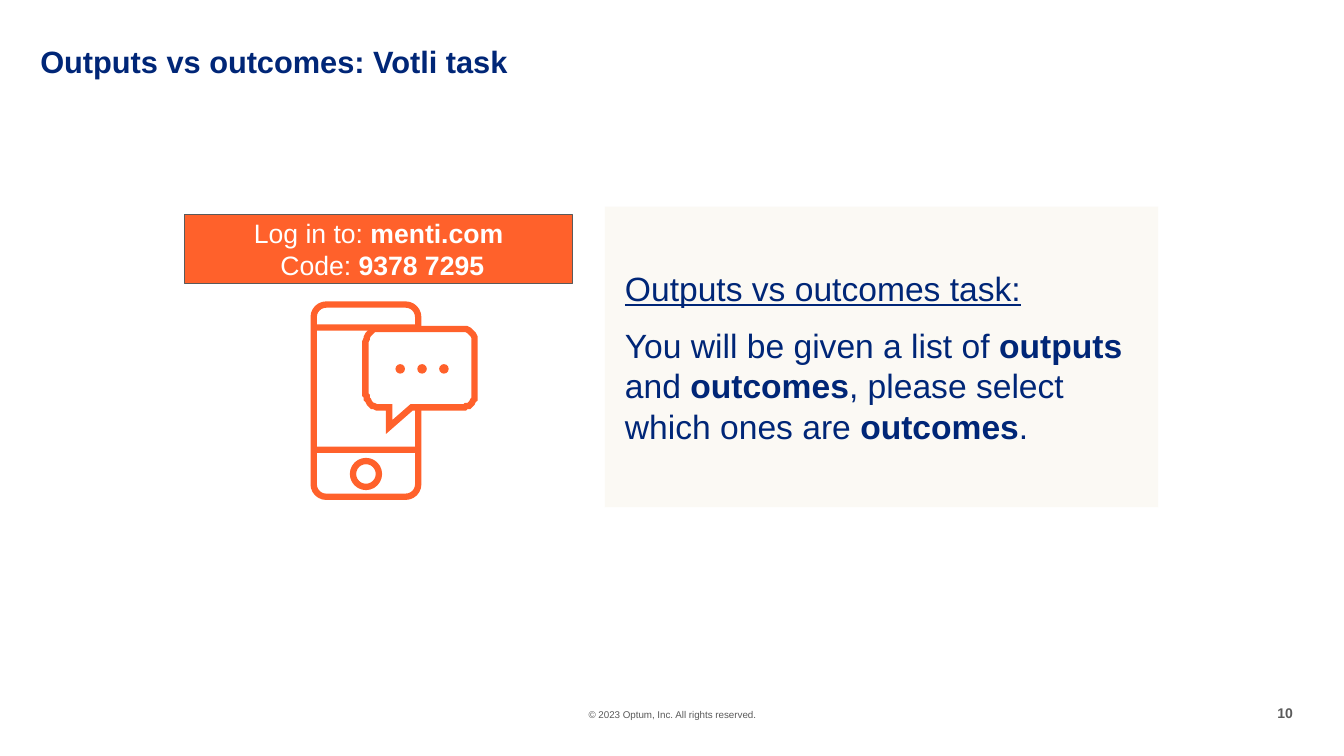
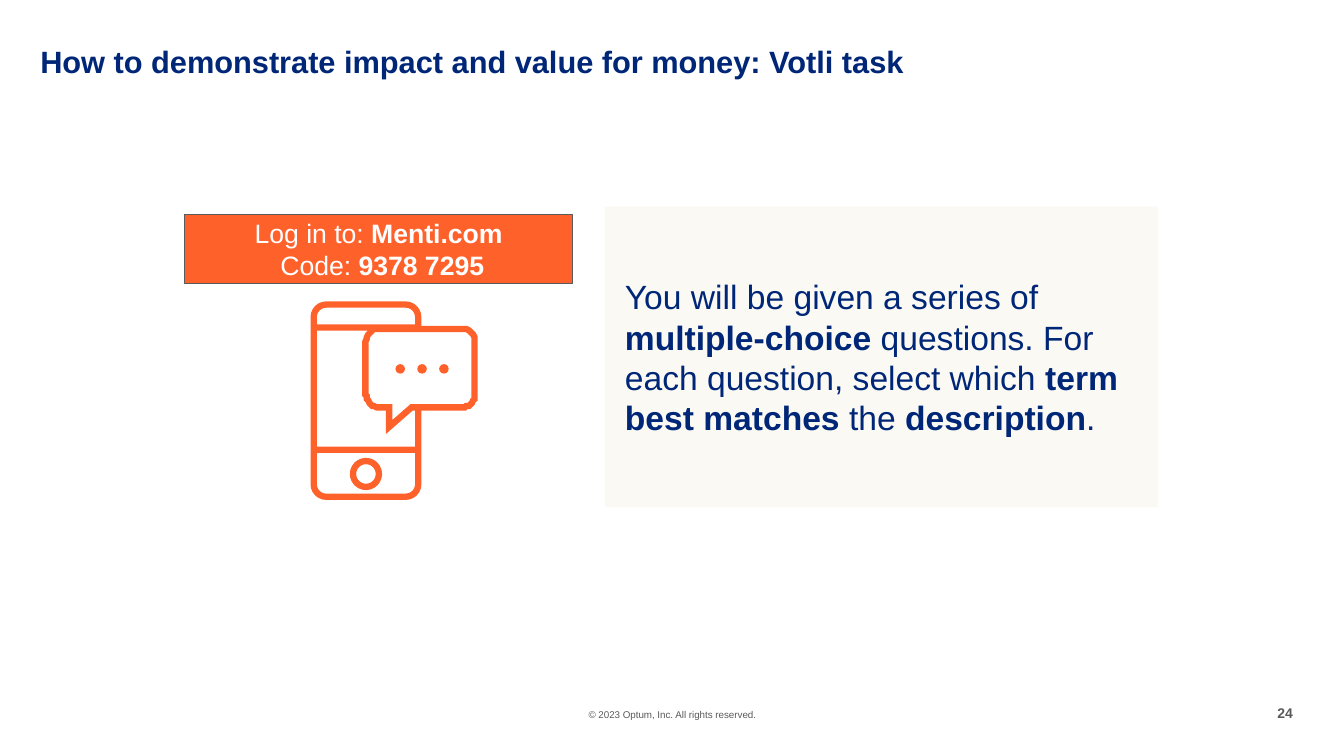
from math import cos, radians, sin

from lxml import etree
from pptx import Presentation
from pptx.dml.color import RGBColor
from pptx.enum.shapes import MSO_SHAPE
from pptx.enum.text import MSO_ANCHOR, PP_ALIGN
from pptx.oxml.ns import qn
from pptx.util import Pt

NAVY = RGBColor(0x00, 0x26, 0x77)
ORANGE = RGBColor(0xFF, 0x61, 0x2B)
CREAM = RGBColor(0xFB, 0xF9, 0xF4)
GREY = RGBColor(0x5A, 0x5A, 0x5A)
WHITE = RGBColor(0xFF, 0xFF, 0xFF)
FONT = "Arial"
STROKE = 4.5

RECT = MSO_SHAPE.RECTANGLE
ROUND = MSO_SHAPE.ROUNDED_RECTANGLE
OVAL = MSO_SHAPE.OVAL
TOP, MIDDLE, BOTTOM = MSO_ANCHOR.TOP, MSO_ANCHOR.MIDDLE, MSO_ANCHOR.BOTTOM
LEFT, CENTER, RIGHT = PP_ALIGN.LEFT, PP_ALIGN.CENTER, PP_ALIGN.RIGHT

TITLE_BOX = (28.8, 33.8, 926.6, 23.8)
BANNER_BOX = (131.8, 153.4, 277.2, 49)
PHONE_BOX = (221.8, 215.3, 79.2, 141.8)
TASK_BOX = (432, 147.6, 395.3, 214.6)
FOOT_BOX = (370, 506.2, 220.4, 8.6)
NUM_BOX = (893.5, 503.3, 30, 12.2)

CODE = " Code: **9378 7295**"
SLIDES = [
    ("Outputs vs outcomes: Votli task", "menti.com", "10",
     ["__Outputs vs outcomes task:",
      "You will be given a list of **outputs** and **outcomes**, "
      "please select which ones are **outcomes**."]),
    ("How to demonstrate impact and value for money: Votli task",
     "Menti.com", "24",
     ["You will be given a series of **multiple-choice** questions. "
      "For each question, select which **term best matches **the "
      "**description**."]),
]


def place(shape, box):
    shape.left, shape.top, shape.width, shape.height = map(Pt, box)


def paint(shape, fill=None, line=None, width=STROKE):
    shape.shadow.inherit = False
    if fill is None:
        shape.fill.background()
    else:
        shape.fill.solid()
        shape.fill.fore_color.rgb = fill
    if line is None:
        shape.line.fill.background()
    else:
        shape.line.color.rgb = line
        shape.line.width = Pt(width)


def draw(shapes, kind, box, fill=None, line=None, width=STROKE):
    shape = shapes.add_shape(kind, *map(Pt, box))
    paint(shape, fill, line, width)
    return shape


def write(shape, lines, size, color, align=LEFT, anchor=TOP, pad=(0, 0),
          bold=False, gap=0):
    """Fill a frame; ** switches bold, a leading __ underlines the line."""
    frame = shape.text_frame
    frame.word_wrap = True
    frame.vertical_anchor = anchor
    frame.margin_left = frame.margin_right = Pt(pad[0])
    frame.margin_top = frame.margin_bottom = Pt(pad[1])
    for i, line in enumerate(lines):
        para = frame.add_paragraph() if i else frame.paragraphs[0]
        para.alignment = align
        para.space_before = Pt(gap if i else 0)
        para.space_after = Pt(gap)
        font = para.font
        font.name, font.size, font.bold = FONT, Pt(size), bold
        font.color.rgb = color
        font.underline = line.startswith("__")
        for j, part in enumerate(line.removeprefix("__").split("**")):
            if part:
                run = para.add_run()
                run.text = part
                if j % 2:
                    run.font.bold = True


def add_title(slide, box, text):
    title = slide.shapes.title
    place(title, box)
    write(title, [text], 22, NAVY, anchor=BOTTOM, bold=True)
    title.text_frame.paragraphs[0].line_spacing = 0.9


def add_foot(slide, num):
    foot = slide.shapes.add_textbox(*map(Pt, FOOT_BOX))
    write(foot, ["© 2023 Optum, Inc. All rights reserved."], 7, GREY, CENTER)
    page = slide.shapes.add_textbox(*map(Pt, NUM_BOX))
    write(page, [num], 10, GREY, RIGHT, bold=True)


def add_bubble(shapes, box):
    """Speech bubble with round corners and a pointed tail at lower left."""
    left, top, wide, high = box
    right, base, curve = left + wide, top + high, 9
    points = [(left + 33, base), (left + 16.5, base + 14),
              (left + 16.5, base)]
    corners = [(left + curve, base - curve, 90),
               (left + curve, top + curve, 180),
               (right - curve, top + curve, 270),
               (right - curve, base - curve, 0)]
    for x, y, start in corners:
        for step in range(0, 91, 10):
            turn = radians(start + step)
            points.append((x + curve * cos(turn), y + curve * sin(turn)))
    pen = shapes.build_freeform(*points[0], scale=float(Pt(1)))
    pen.add_line_segments(points[1:], close=True)
    bubble = pen.convert_to_shape()
    paint(bubble, WHITE, ORANGE)
    edge = bubble.line._get_or_add_ln()
    etree.SubElement(edge, qn("a:miter"), lim="800000")


def add_phone(slide, box):
    left, top, wide, high = box
    shapes = slide.shapes.add_group_shape().shapes
    half = STROKE / 2
    body = draw(shapes, ROUND, (left + half, top + half, wide - STROKE,
                                high - STROKE), line=ORANGE)
    body.adjustments[0] = 0.12
    for y in (16.4, 103.7):
        draw(shapes, RECT, (left + half, top + y, wide - STROKE, STROKE),
             ORANGE)
    ring = 18.5
    draw(shapes, OVAL, (left + (wide - ring) / 2, top + 114, ring, ring),
         line=ORANGE)
    add_bubble(shapes, (left + 39.6, top + 19.4, 77.8, 56.2))
    dot = 6.8
    for i in range(3):
        draw(shapes, OVAL, (left + 60.7 + 15.6 * i, top + 44.8, dot, dot),
             ORANGE)


def add_banner(slide, box, site):
    banner = draw(slide.shapes, RECT, box, ORANGE, GREY, 0.5)
    write(banner, [f"Log in to: **{site}**", CODE], 19, WHITE, CENTER,
          MIDDLE, (7.2, 3.6))


def add_task(slide, box, lines):
    panel = draw(slide.shapes, RECT, box, CREAM)
    write(panel, lines, 24, NAVY, LEFT, MIDDLE, (14.4, 14.4), gap=6)


def main():
    deck = Presentation()
    deck.slide_width, deck.slide_height = Pt(960), Pt(540)
    for title, site, num, task in SLIDES:
        slide = deck.slides.add_slide(deck.slide_layouts[5])
        add_title(slide, TITLE_BOX, title)
        add_task(slide, TASK_BOX, task)
        add_banner(slide, BANNER_BOX, site)
        add_phone(slide, PHONE_BOX)
        add_foot(slide, num)
    deck.save("out.pptx")


if __name__ == "__main__":
    main()
